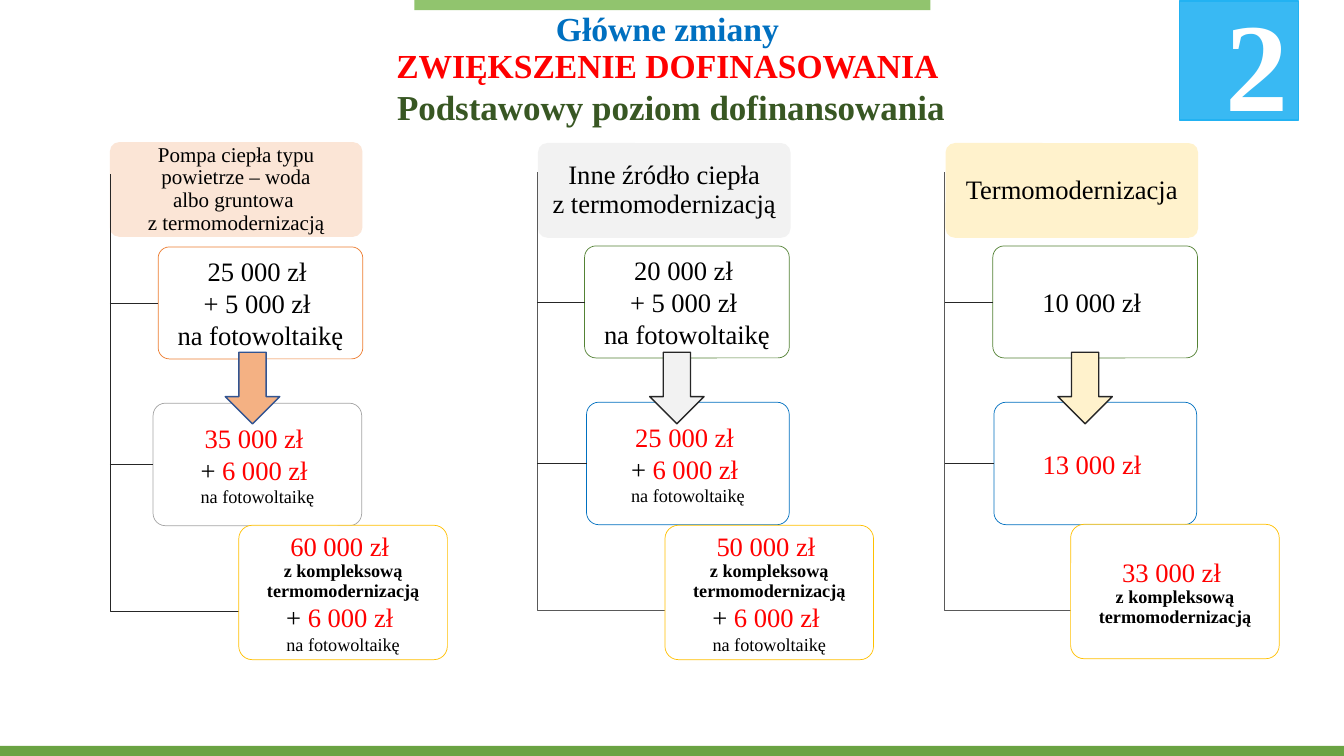
from lxml import etree
from pptx import Presentation
from pptx.dml.color import RGBColor
from pptx.enum.shapes import MSO_CONNECTOR, MSO_SHAPE
from pptx.enum.text import MSO_ANCHOR, MSO_AUTO_SIZE, PP_ALIGN
from pptx.oxml.ns import qn
from pptx.util import Pt

RECT, ROUNDED, DOWN = MSO_SHAPE.RECTANGLE, MSO_SHAPE.ROUNDED_RECTANGLE, MSO_SHAPE.DOWN_ARROW
STRAIGHT = MSO_CONNECTOR.STRAIGHT
CENTER, LEFT = PP_ALIGN.CENTER, PP_ALIGN.LEFT
MIDDLE, TOP = MSO_ANCHOR.MIDDLE, MSO_ANCHOR.TOP
NO_FIT = MSO_AUTO_SIZE.NONE

FONT = "Times New Roman"
BLACK, RED, WHITE, DARK = "000000", "FF0000", "FFFFFF", "262626"

TITLE = [
    (0.9, [("Główne zmiany", 24, "0070C0", True)]),
    (0.9, [("ZWIĘKSZENIE DOFINASOWANIA", 24, RED, True)]),
]
SUBTITLE = [(1, [("Podstawowy poziom dofinansowania", 25, "385723", True)])]
NUMBER = [(1, [("2", 90, WHITE, True)])]

EXTRA_OLD = (1, [("+ 5 000 zł \nna fotowoltaikę", 19, BLACK, False)])
EXTRA_NEW = (1, [("+ ", 19, BLACK, False), ("6 000 zł \n", 19, RED, False),
                 ("na fotowoltaikę", 13, BLACK, False)])
COMPLEX = [(0.9, [(word, 13, BLACK, True)]) for word in ("z kompleksową", "termomodernizacją")]

COLUMNS = [
    dict(x=78.5, y=101.5, header="Pompa ciepła typu powietrze – woda\nalbo gruntowa \nz termomodernizacją",
         size=15, fill="FBE5D6", old="25 000 zł ", new="35 000 zł ", top="60 000 zł ", solar=True,
         boxes=[(113, 176.4, 146.2, 80), (109.4, 288, 149, 87.5), (170.6, 375.2, 149, 96)],
         lines=("ED7D31", "A5A5A5"), trunk=(78.5, 124.6, 437, DARK), arrow=(180.4, "F4B183", "325491")),
    dict(x=384.3, y=102.2, header="Inne źródło ciepła\nz termomodernizacją",
         size=19, fill="F2F2F2", old="20 000 zł ", new="25 000 zł ", top="50 000 zł ", solar=True,
         boxes=[(417.6, 175.7, 146.2, 80), (419, 287.3, 144.8, 87.5), (475, 375.2, 149, 96)],
         lines=("548235", "0070C0"), trunk=(383.8, 123.1, 436.2, "595959"), arrow=(483.5, "F2F2F2", DARK)),
    dict(x=675.4, y=102.2, header="Termomodernizacja",
         size=19, fill="FFF2CC", old="10 000 zł ", new="13 000 zł ", top="33 000 zł ", solar=False,
         boxes=[(709.2, 175.7, 146.2, 80), (710, 287.3, 144.8, 87.5), (764.8, 374.5, 149, 96)],
         lines=("548235", "0070C0"), trunk=(674.9, 123.1, 436.2, "595959"), arrow=(775.1, "FFF2CC", DARK)),
]
HEADER_W, HEADER_H = 180.4, 67.7
ARROW_W, ARROW_TOP, ARROW_H = 38.9, 251.6, 51.1


def rgb(value):
    return RGBColor.from_string(value)


def write(sp, paras, align=CENTER, anchor=MIDDLE, inset=(6.5, 5)):
    tf = sp.text_frame
    tf.word_wrap = True
    tf.auto_size = NO_FIT
    tf.vertical_anchor = anchor
    tf.margin_left = tf.margin_right = Pt(inset[0])
    tf.margin_top = tf.margin_bottom = Pt(inset[1])
    for i, (spacing, runs) in enumerate(paras):
        p = tf.add_paragraph() if i else tf.paragraphs[0]
        p.alignment = align
        p.line_spacing = spacing
        p.space_before = p.space_after = Pt(0)
        for text, size, color, bold in runs:
            for j, part in enumerate(text.split("\n")):
                if j:
                    p.add_line_break()
                if part:
                    r = p.add_run()
                    r.text = part
                    r.font.name = FONT
                    r.font.size = Pt(size)
                    r.font.bold = bold
                    r.font.color.rgb = rgb(color)


def style(sp, fill=None, line=None, width=0.5):
    sp.shadow.inherit = False
    if fill:
        sp.fill.solid()
        sp.fill.fore_color.rgb = rgb(fill)
    else:
        sp.fill.background()
    if line:
        sp.line.color.rgb = rgb(line)
        sp.line.width = Pt(width)
    else:
        sp.line.fill.background()


def shape(kind, box, fill, line=None, width=0.5):
    sp = s.shapes.add_shape(kind, *map(Pt, box))
    style(sp, fill, line, width)
    if kind == ROUNDED:
        sp.adjustments[0] = 0.1
    return sp


def amount_box(box, line, paras):
    sp = shape(ROUNDED, box, WHITE, line)
    color = sp.fill._xPr.find(qn("a:solidFill"))[0]
    etree.SubElement(color, qn("a:alpha"), val="90000")
    write(sp, paras)
    return sp


def text_box(box, paras):
    write(s.shapes.add_textbox(*map(Pt, box)), paras, LEFT, TOP, (7.2, 3.6))


def trunk_line(x, top, bottom, color, end):
    fb = s.shapes.build_freeform(Pt(x), Pt(top))
    fb.add_line_segments([(Pt(x), Pt(bottom)), (Pt(end), Pt(bottom))], close=False)
    style(fb.convert_to_shape(), line=color)


def branch(x, box, sp):
    y = box[1] + box[3] / 2
    c = s.shapes.add_connector(STRAIGHT, Pt(x), Pt(y), Pt(box[0]), Pt(y))
    c.end_connect(sp, 1)
    c.line.color.rgb = rgb(DARK)
    c.line.width = Pt(0.5)
    etree.SubElement(c._element.spPr, qn("a:effectLst"))


def column(col):
    old, new, top = col["boxes"]
    trunk = col["trunk"]
    header = shape(ROUNDED, (col["x"], col["y"], HEADER_W, HEADER_H), col["fill"])
    write(header, [(0.9, [(col["header"], col["size"], BLACK, False)])], inset=(5.8, 5))
    trunk_line(*trunk, top[0])
    extra_old, extra_new = ([EXTRA_OLD], [EXTRA_NEW]) if col["solar"] else ([], [])
    old_paras = [(1, [(col["old"], 19, BLACK, False)])] + extra_old
    new_paras = [(1, [(col["new"], 19, RED, False)])] + extra_new
    for box, line, paras in zip((old, new), col["lines"], (old_paras, new_paras)):
        branch(trunk[0], box, amount_box(box, line, paras))
    amount_box(top, "FFC000", [(1, [(col["top"], 19, RED, False)])] + COMPLEX + extra_new)
    center, fill, line = col["arrow"]
    shape(DOWN, (center - ARROW_W / 2, ARROW_TOP, ARROW_W, ARROW_H), fill, line, 1)


prs = Presentation()
prs.slide_width, prs.slide_height = Pt(960), Pt(540)
s = prs.slides.add_slide(prs.slide_layouts[5])
title = s.shapes.title
title.left, title.top, title.width, title.height = map(Pt, (150, 6.5, 653.5, 57))
write(title, TITLE, inset=(7.2, 3.6))

shape(RECT, (0, 532.8, 960, 7.2), "6AA343")
shape(RECT, (296, 0, 368.6, 7.2), "91C46E")
text_box((276.5, 57.6, 480, 37.4), SUBTITLE)
for col in COLUMNS:
    column(col)
shape(RECT, (842.4, 0.7, 85, 85), "39B9F3", "22B2F2", 1)
text_box((868.3, -13.7, 85, 116.6), NUMBER)

prs.save("out.pptx")
